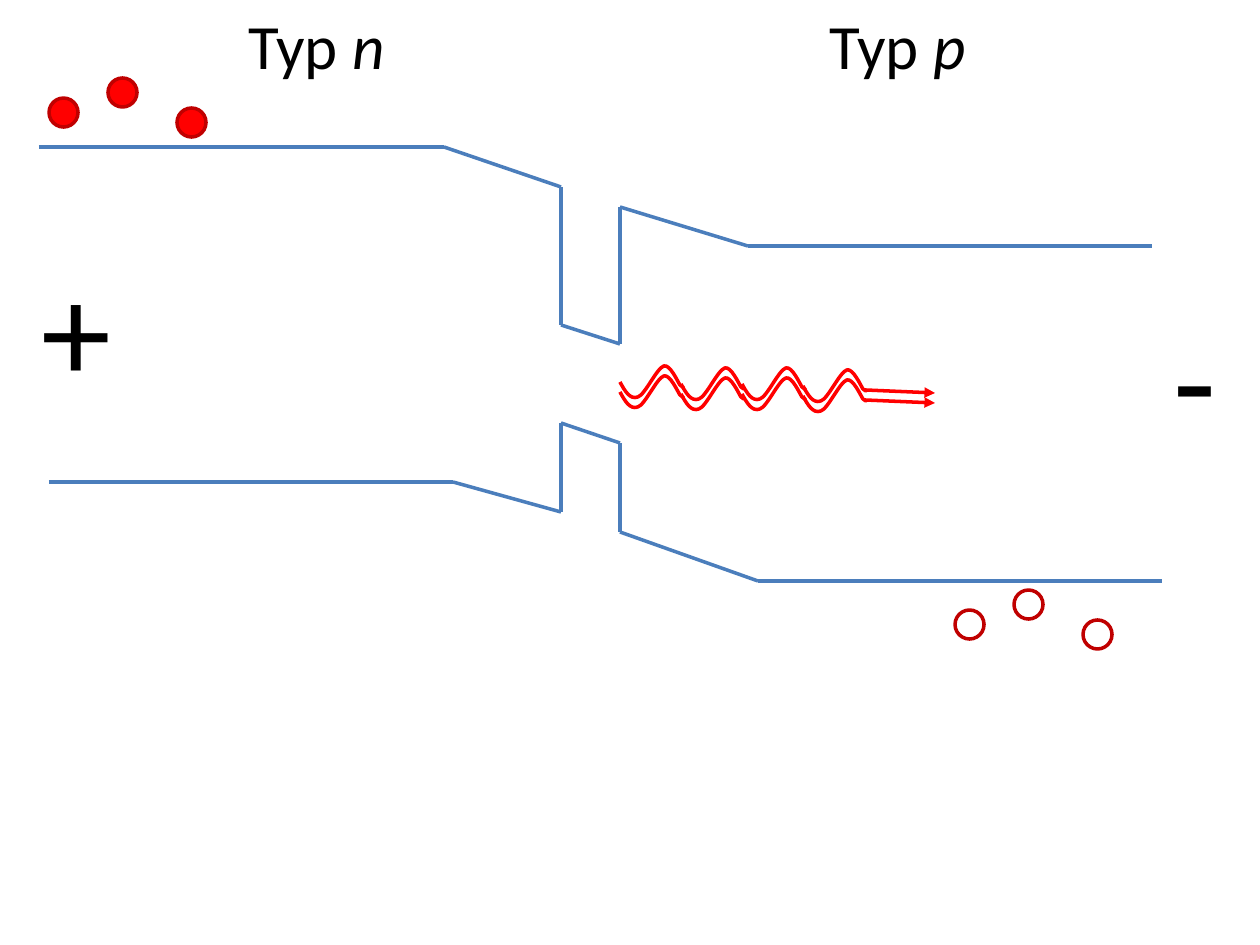
from dataclasses import dataclass
from typing import Any, Sequence, Tuple

import pptx
import pptx.dml.color
import pptx.enum.shapes
import pptx.enum.text
import pptx.oxml
import pptx.oxml.ns
import pptx.util

PX_PER_INCH = 126
FONT = "Calibri"
BAND_COLOR = "4B7EBC"
PHOTON_COLOR = "FF0000"
CARRIER_FILL = "FF0000"
CARRIER_EDGE = "C00000"
BLACK = "000000"
LINE_WIDTH = 2
CARRIER_SIZE = 29

Point = Tuple[int, int]


@dataclass(frozen=True)
class Label:
    left: int
    top: int
    width: int
    height: int
    size: int
    text: str
    italic_text: str = ""


CONDUCTION_BAND = [(39, 147), (444, 147), (561, 187), (561, 325),
                   (620, 344), (620, 207), (748, 246), (1152, 246)]
VALENCE_BAND = [(49, 482), (453, 482), (561, 512), (561, 423),
                (620, 443), (620, 532), (758, 581), (1162, 581)]

ELECTRONS = [(49, 98), (108, 78), (177, 108)]
HOLES = [(x + 906, y + 512) for x, y in ELECTRONS]

LABELS = [
    Label(236, 0, 161, 89, 36, "Typ", " n"),
    Label(817, 0, 163, 89, 36, "Typ", " p"),
    Label(29, 236, 96, 183, 80, "+"),
    Label(1161, 285, 69, 183, 80, "-"),
]

# One wave period: a start point, then three points for each cubic segment.
WAVE_POINTS = [(0, 0), (5, 9), (10, 18), (18, 15), (25, 13), (37, -14), (44, -16),
               (50, -18), (58, 0), (60, 3), (64, 6), (63, 5), (63, 4)]
WAVE_PERIOD = 61
WAVE_DROPS = (0, 2, 2, 4)


def px(value: int) -> int:
    return round(value * pptx.util.Inches(1) / PX_PER_INCH)


def rgb(color: str) -> pptx.dml.color.RGBColor:
    return pptx.dml.color.RGBColor.from_string(color)


def drawing_element(tag: str, attributes: str = "") -> Any:
    return pptx.oxml.parse_xml(f'<a:{tag} {pptx.oxml.ns.nsdecls("a")} {attributes}/>')


def style_line(shape: Any, color: str) -> None:
    shape.line.color.rgb = rgb(color)
    shape.line.width = pptx.util.Pt(LINE_WIDTH)


def add_line(shapes: Any, start: Point, end: Point, color: str, arrow: bool = False) -> None:
    connector = shapes.add_connector(pptx.enum.shapes.MSO_CONNECTOR.STRAIGHT,
                                     px(start[0]), px(start[1]), px(end[0]), px(end[1]))
    style_line(connector, color)
    properties = connector._element.spPr
    if arrow:
        outline = properties.find(pptx.oxml.ns.qn("a:ln"))
        outline.append(drawing_element("tailEnd", 'type="triangle"'))
    properties.append(drawing_element("effectLst"))


def add_band_edge(shapes: Any, points: Sequence[Point]) -> None:
    for start, end in zip(points, points[1:]):
        add_line(shapes, start, end, BAND_COLOR)


def add_carrier(shapes: Any, position: Point, filled: bool) -> None:
    carrier = shapes.add_shape(pptx.enum.shapes.MSO_SHAPE.OVAL, px(position[0]),
                               px(position[1]), px(CARRIER_SIZE), px(CARRIER_SIZE))
    carrier.shadow.inherit = False
    style_line(carrier, CARRIER_EDGE)
    if filled:
        carrier.fill.solid()
        carrier.fill.fore_color.rgb = rgb(CARRIER_FILL)
    else:
        carrier.fill.background()


def add_label(shapes: Any, label: Label) -> None:
    box = shapes.add_textbox(px(label.left), px(label.top), px(label.width), px(label.height))
    frame = box.text_frame
    frame.word_wrap = False
    frame.auto_size = pptx.enum.text.MSO_AUTO_SIZE.SHAPE_TO_FIT_TEXT
    paragraph = frame.paragraphs[0]
    paragraph.text = label.text
    if label.italic_text:
        run = paragraph.add_run()
        run.text = label.italic_text
        run.font.italic = True
    for run in paragraph.runs:
        run.font.name = FONT
        run.font.size = pptx.util.Pt(label.size)
        run.font.color.rgb = rgb(BLACK)


def curve_outline(shape: Any) -> None:
    """Turn each three line segments of a freeform into one cubic curve."""
    lines = list(shape._element.iter(pptx.oxml.ns.qn("a:lnTo")))
    for first in range(0, len(lines), 3):
        curve = drawing_element("cubicBezTo")
        lines[first].addprevious(curve)
        for line in lines[first:first + 3]:
            curve.append(line[0])
            line.getparent().remove(line)


def add_wave(shapes: Any, left: int, top: int) -> None:
    points = [(px(left + x), px(top + y)) for x, y in WAVE_POINTS]
    builder = shapes.build_freeform(*points[0])
    builder.add_line_segments(points[1:], close=False)
    wave = builder.convert_to_shape()
    curve_outline(wave)
    wave.shadow.inherit = False
    wave.fill.background()
    style_line(wave, PHOTON_COLOR)


def add_photon(shapes: Any, left: int, top: int) -> None:
    group = shapes.add_group_shape()
    for index, drop in enumerate(WAVE_DROPS):
        add_wave(group.shapes, left + index * WAVE_PERIOD, top + drop)
    add_line(group.shapes, (left + 245, top + 8), (left + 315, top + 11),
             PHOTON_COLOR, arrow=True)


def main() -> None:
    presentation = pptx.Presentation()
    presentation.slide_width = px(1260)
    presentation.slide_height = px(945)
    slide = presentation.slides.add_slide(presentation.slide_layouts.get_by_name("Blank"))
    shapes = slide.shapes

    for band_edge in (CONDUCTION_BAND, VALENCE_BAND):
        add_band_edge(shapes, band_edge)
    for carriers, filled in ((ELECTRONS, True), (HOLES, False)):
        for position in carriers:
            add_carrier(shapes, position, filled)
    for label in LABELS:
        add_label(shapes, label)
    for top in (382, 392):
        add_photon(shapes, 620, top)

    presentation.save("out.pptx")


if __name__ == "__main__":
    main()
